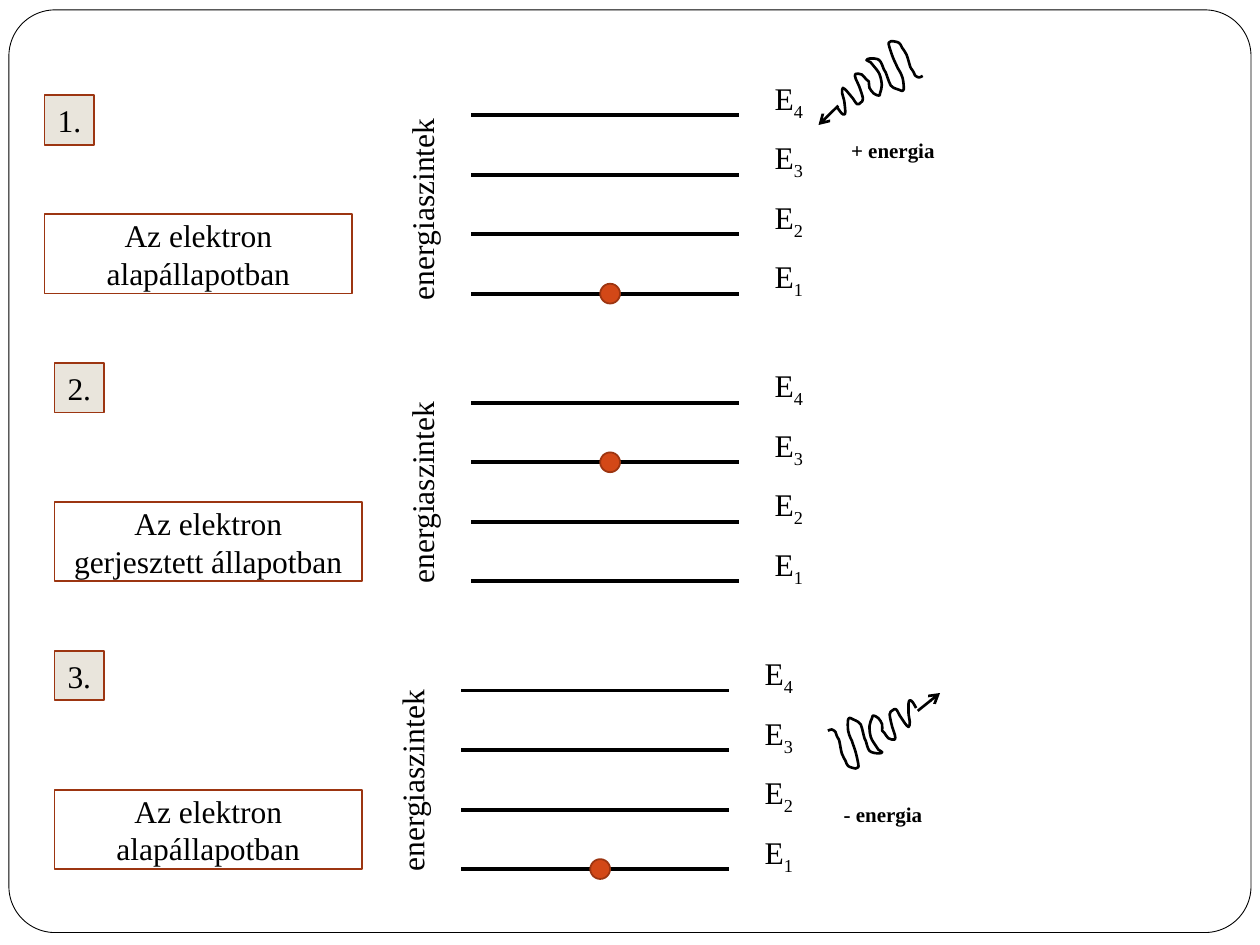
from dataclasses import dataclass
from typing import Optional

from lxml.etree import SubElement
from pptx import Presentation
from pptx.dml.color import RGBColor
from pptx.enum.shapes import MSO_CONNECTOR, MSO_SHAPE
from pptx.enum.text import MSO_ANCHOR, PP_ALIGN
from pptx.oxml.ns import qn
from pptx.util import Cm, Pt

COLORS = {"black": "000000", "white": "FFFFFF", "rust": "9C3511",
          "orange": "D34817", "sand": "E9E5DC"}
FONT = "Times New Roman"
GAP = 1.2          # distance between energy levels, cm
LEVELS = 4
LEVEL_WIDTH = 5.4
DOT = 0.4

# Photon wave outline, in hundredths of an inch
WAVE_UNIT = 0.0254
WAVE = [
    (0, 48), (3, 53), (5, 54), (6, 52), (6, 43), (5, 37), (6, 33), (9, 36),
    (11, 39), (13, 42), (16, 47), (19, 46), (21, 43), (19, 33), (17, 27),
    (17, 23), (22, 24), (25, 28), (27, 30), (27, 35), (30, 40), (34, 42),
    (35, 40), (37, 34), (36, 25), (32, 18), (30, 15), (27, 13), (30, 12),
    (37, 14), (40, 22), (41, 24), (43, 32), (44, 35), (46, 37), (50, 39),
    (52, 40), (54, 39), (54, 30), (52, 24), (51, 22), (50, 19), (48, 13),
    (46, 4), (46, 1), (48, 0), (54, 2), (56, 6), (59, 12), (61, 22),
    (62, 24), (63, 26), (64, 29), (67, 31), (70, 30),
]


@dataclass
class Photon:
    label: str
    label_at: tuple
    wave_at: tuple
    rotation: float
    arrow: tuple       # x1, y1, x2, y2


@dataclass
class Panel:
    number: str
    caption: str
    left: float        # left end of the levels
    top: float         # height of level E4
    note_left: float   # left of badge and caption
    badge_top: float
    axis_top: float
    axis_height: float
    electron: int      # level that holds the electron
    photon: Optional[Photon] = None


PANELS = [
    Panel("1.", "Az elektron alapállapotban", 9.5, 2.32, 0.9, 1.92, 1.52, 5.4, 1,
          Photon("+ energia", (16.9, 2.52), (16.82, 0.86), -5.9,
                 (16.9, 2.13, 16.5, 2.52))),
    Panel("2.", "Az elektron gerjesztett állapotban", 9.5, 8.12, 1.1, 7.32,
          6.73, 6.4, 3),
    Panel("3.", "Az elektron alapállapotban", 9.3, 13.92, 1.1, 13.12, 13.2, 5.08, 1,
          Photon("- energia", (16.7, 15.92), (16.69, 14.12), 180,
                 (18.5, 14.33, 18.95, 13.97))),
]


def rgb(name: str) -> RGBColor:
    return RGBColor.from_string(COLORS[name])


def set_line(sp, color: str, width: float) -> None:
    sp.line.color.rgb = rgb(color)
    sp.line.width = Pt(width)


def add_box(shapes, kind, x, y, w, h, fill="white", line="white", width=0.25):
    sp = shapes.add_shape(kind, Cm(x), Cm(y), Cm(w), Cm(h))
    sp.shadow.inherit = False
    sp.fill.solid()
    sp.fill.fore_color.rgb = rgb(fill)
    set_line(sp, line, width)
    return sp


def add_text(shapes, text, x, y, w, h, sub="", size=18, bold=None,
             inset=0.0, vertical=False, **style) -> None:
    sp = add_box(shapes, MSO_SHAPE.RECTANGLE, x, y, w, h, **style)
    tf = sp.text_frame
    frame = {"word_wrap": True, "vertical_anchor": MSO_ANCHOR.MIDDLE,
             "margin_left": Cm(inset), "margin_right": Cm(inset),
             "margin_top": 0, "margin_bottom": 0}
    for name, value in frame.items():
        setattr(tf, name, value)
    if vertical:
        tf._txBody.bodyPr.set("vert", "vert270")
    p = tf.paragraphs[0]
    p.alignment = PP_ALIGN.CENTER
    for part in filter(None, (text, sub)):
        r = p.add_run()
        r.text = part
        for name, value in {"name": FONT, "size": Pt(size), "bold": bold}.items():
            setattr(r.font, name, value)
        r.font.color.rgb = rgb("black")
    if sub:
        r.font._element.set("baseline", "-25000")


def add_line(shapes, x1, y1, x2, y2, width: float, arrow: bool = False) -> None:
    s = shapes.add_connector(MSO_CONNECTOR.STRAIGHT, Cm(x1), Cm(y1), Cm(x2), Cm(y2))
    set_line(s, "black", width)
    if arrow:
        SubElement(s.line._get_or_add_ln(), qn("a:tailEnd"), type="arrow")
    SubElement(s._element.spPr, qn("a:effectLst"))


def smooth(sp) -> None:
    """Turn the straight segments of a freeform into smooth curves."""
    outline = next(sp._element.iter(qn("a:path")))
    points = [(int(pt.get("x")), int(pt.get("y"))) for pt in outline.iter(qn("a:pt"))]
    for segment in outline.findall(qn("a:lnTo")):
        outline.remove(segment)
    ends = [points[0], *points, points[-1]]
    for a, b, c, d in zip(ends, ends[1:], ends[2:], ends[3:]):
        curve = SubElement(outline, qn("a:cubicBezTo"))
        for x, y in ((b[0] + (c[0] - a[0]) / 6, b[1] + (c[1] - a[1]) / 6),
                     (c[0] - (d[0] - b[0]) / 6, c[1] - (d[1] - b[1]) / 6), c):
            SubElement(curve, qn("a:pt"), x=str(round(x)), y=str(round(y)))


def add_photon(shapes, photon: Photon) -> None:
    x0, y0 = photon.wave_at
    points = [(Cm(x0 + x * WAVE_UNIT), Cm(y0 + y * WAVE_UNIT)) for x, y in WAVE]
    builder = shapes.build_freeform(*points[0])
    builder.add_line_segments(points[1:], close=False)
    sp = builder.convert_to_shape()
    smooth(sp)
    sp.shadow.inherit = False
    sp.fill.background()
    set_line(sp, "black", 1.5)
    sp.rotation = photon.rotation
    add_line(shapes, *photon.arrow, width=1.5, arrow=True)
    add_text(shapes, photon.label, *photon.label_at, 2.2, 1, size=12, bold=True)


def add_panel(shapes, panel: Panel) -> None:
    bottom = panel.top + (LEVELS - 1) * GAP
    add_text(shapes, "energiaszintek", panel.left - 1.6, panel.axis_top,
             1.2, panel.axis_height, vertical=True)
    # Energy levels with their names
    for level in range(1, LEVELS + 1):
        y = bottom - (level - 1) * GAP
        add_line(shapes, panel.left, y, panel.left + LEVEL_WIDTH, y, 2.25)
        add_text(shapes, "E", panel.left + 5.6, y - 0.8, 1.6, 1, sub=str(level))
    # Electron
    y = bottom - (panel.electron - 1) * GAP
    add_box(shapes, MSO_SHAPE.OVAL, panel.left + 2.6, y - DOT / 2, DOT, DOT,
            "orange", "rust", 1)
    # Badge and caption
    add_text(shapes, panel.number, panel.note_left, panel.badge_top, 1, 1,
             fill="sand", line="rust", width=1)
    add_text(shapes, panel.caption, panel.note_left, bottom - 1.6, 6.2, 1.6,
             inset=0.25, line="rust", width=1)
    if panel.photon:
        add_photon(shapes, panel.photon)


def main() -> None:
    prs = Presentation()
    prs.slide_width, prs.slide_height = Cm(25.4), Cm(19.05)
    shapes = prs.slides.add_slide(prs.slide_layouts[6]).shapes
    # Rounded page frame
    frame = add_box(shapes, MSO_SHAPE.ROUNDED_RECTANGLE, 0.18, 0.2, 25.04, 18.6,
                    line="black", width=0.5)
    frame.adjustments[0] = 0.05
    # One group per state of the electron
    for panel in PANELS:
        add_panel(shapes.add_group_shape().shapes, panel)
    prs.save("out.pptx")


if __name__ == "__main__":
    main()
